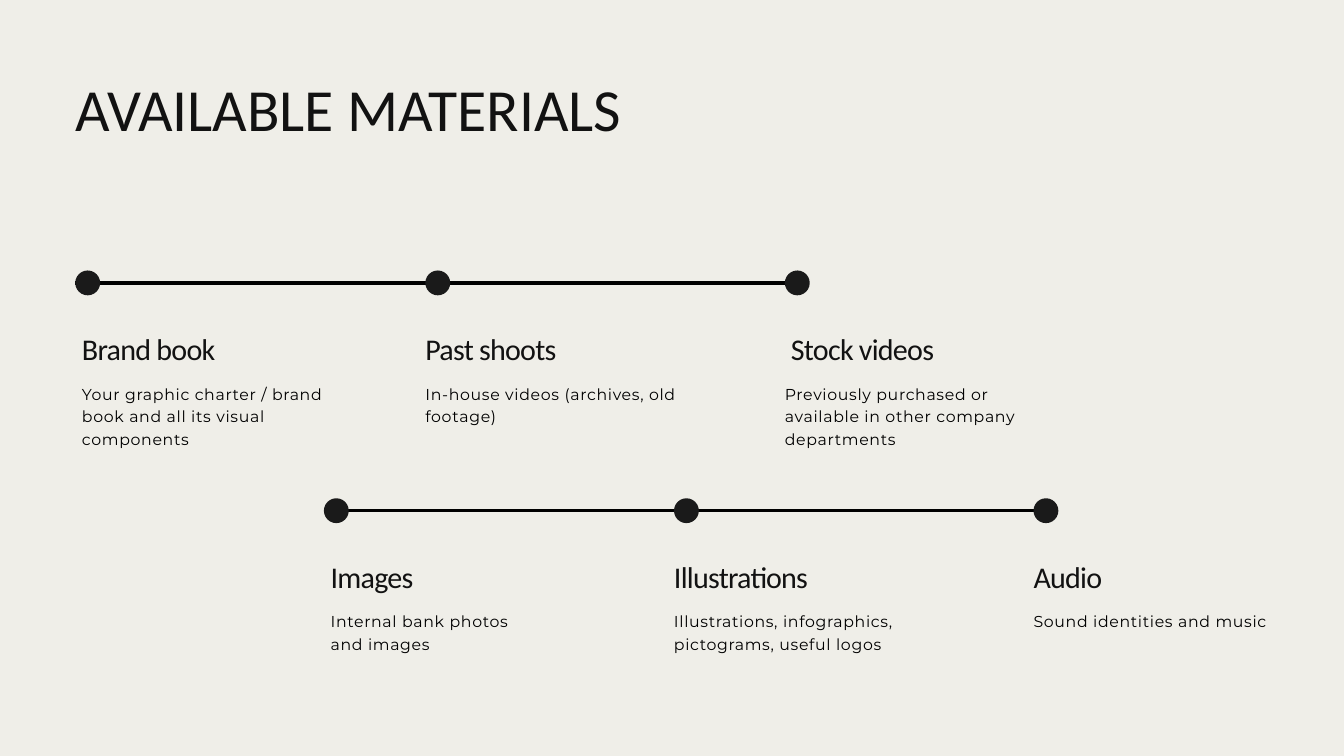
"""Build the "Available materials" slide: two staggered three-step timelines."""
from pptx import Presentation
from pptx.dml.color import RGBColor
from pptx.enum import shapes, text
from pptx.oxml import ns
from pptx.util import Inches, Pt
from lxml import etree

TITLE = "AVAILABLE MATERIALS"
TIMELINES = [
    {"left": 1.12, "axis": 4.21, "steps": [
        ("Brand book", "Your graphic charter / brand book and all its visual components", 3.97),
        ("Past shoots", "In-house videos (archives, old footage)", 4.07),
        ("Stock videos", "Previously purchased or available in other company departments", 4.07),
    ]},
    {"left": 4.82, "axis": 7.6, "steps": [
        ("Images", "Internal bank photos and images", 3),
        ("Illustrations", "Illustrations, infographics, pictograms, useful logos", 3.5),
        ("Audio", "Sound identities and music", 3.5),
    ]},
]
HEADING_INDENTS = {"Stock videos": 0.09}
DOT_OFFSETS = (0, 5.21, 10.56)
TEXT_OFFSETS = (0.1, 5.21, 10.56)
DOT = 0.37

PAPER = RGBColor(0xEF, 0xEE, 0xE8)
INK = RGBColor(0x12, 0x12, 0x12)
DOT_FILL = RGBColor(0x1A, 0x1A, 0x1A)
BLACK = RGBColor(0, 0, 0)


def write(box, words, font, size, leading, color, tracking=0, indent=0):
    frame = box.text_frame
    frame.word_wrap = True
    frame.auto_size = text.MSO_AUTO_SIZE.NONE
    frame.vertical_anchor = text.MSO_ANCHOR.TOP
    frame.margin_top = frame.margin_right = frame.margin_bottom = 0
    frame.margin_left = Inches(indent)
    paragraph = frame.paragraphs[0]
    paragraph.alignment = text.PP_ALIGN.LEFT
    paragraph.line_spacing = Pt(leading)
    run = paragraph.add_run()
    run.text = words
    if tracking:
        run.font._element.set("spc", str(round(tracking * 100)))
    paragraph.font.name = font
    paragraph.font.size = Pt(size)
    paragraph.font.color.rgb = color


def add_axis(slide, left, axis):
    line = slide.shapes.add_connector(
        shapes.MSO_CONNECTOR.STRAIGHT,
        Inches(left), Inches(axis), Inches(left + DOT_OFFSETS[-1]), Inches(axis))
    line.line.color.rgb = BLACK
    line.line.width = Pt(3.75)
    etree.SubElement(line._element.spPr, ns.qn("a:effectLst"))


def add_dot(slide, left, axis):
    dot = slide.shapes.add_shape(
        shapes.MSO_SHAPE.OVAL,
        Inches(left), Inches(axis - DOT / 2), Inches(DOT), Inches(DOT))
    dot.shadow.inherit = False
    dot.fill.solid()
    dot.fill.fore_color.rgb = DOT_FILL
    dot.line.fill.background()


def add_step(slide, left, axis, heading, detail, detail_width):
    heading_box = slide.shapes.add_textbox(
        Inches(left), Inches(axis + 0.67), Inches(3.5), Inches(0.56))
    write(heading_box, heading, "Calibri", 32.2, 41.2, INK, -0.8,
          HEADING_INDENTS.get(heading, 0))
    detail_box = slide.shapes.add_textbox(
        Inches(left), Inches(axis + 1.45), Inches(detail_width), Inches(0.99))
    write(detail_box, detail, "Montserrat", 16.9, 24.5, BLACK, 0.7)


def main():
    deck = Presentation()
    deck.slide_width, deck.slide_height = Inches(20), Inches(11.25)
    slide = deck.slides.add_slide(deck.slide_layouts.get_by_name("Title Only"))
    slide.background.fill.solid()
    slide.background.fill.fore_color.rgb = PAPER

    title = slide.shapes.title
    title.left, title.top = Inches(1.12), Inches(1.25)
    title.width, title.height = Inches(10.81), Inches(0.94)
    write(title, TITLE, "Calibri", 64, 64, INK)

    for timeline in TIMELINES:
        left, axis = timeline["left"], timeline["axis"]
        add_axis(slide, left, axis)
        for dot_x, text_x, step in zip(DOT_OFFSETS, TEXT_OFFSETS, timeline["steps"]):
            add_dot(slide, left + dot_x, axis)
            add_step(slide, left + text_x, axis, *step)

    deck.save("out.pptx")


if __name__ == "__main__":
    main()
